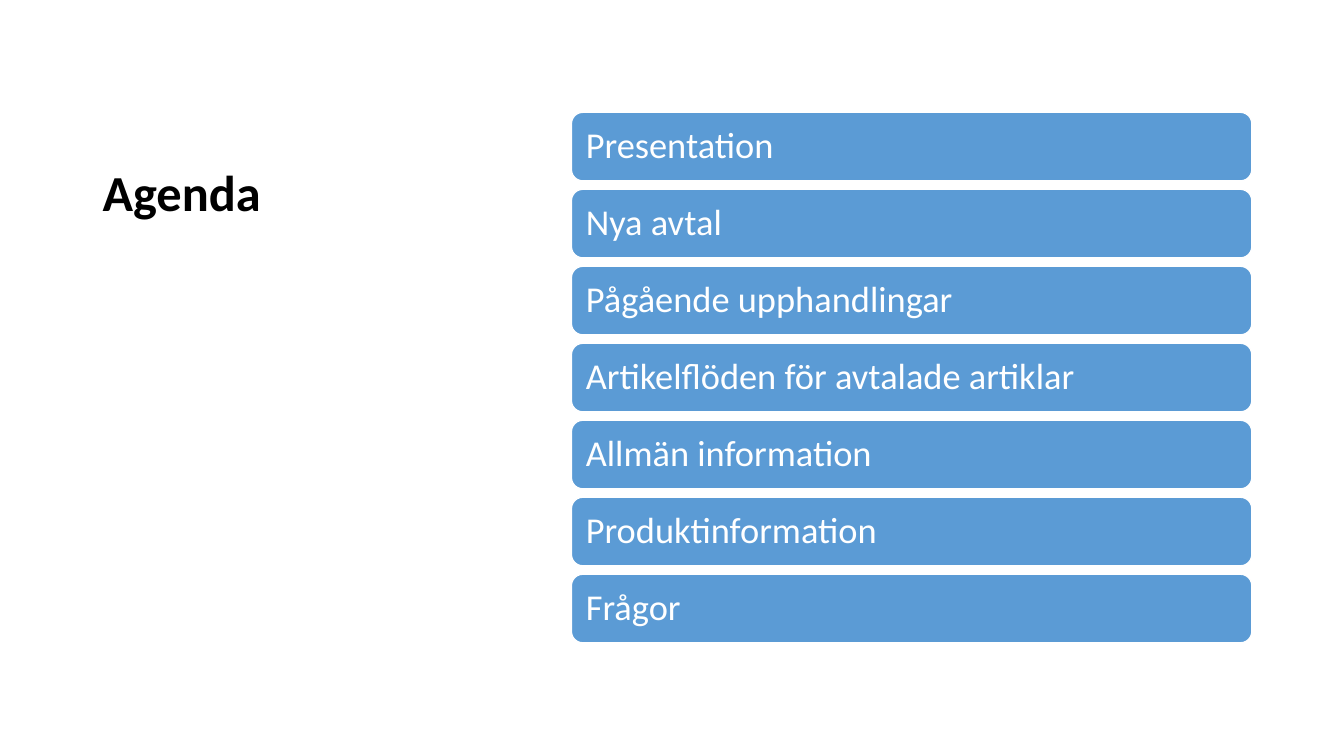
from pptx import Presentation
from pptx import util as u
from pptx.dml.color import RGBColor
from pptx.enum import shapes, text

AGENDA_ITEMS = [
    "Presentation",
    "Nya avtal",
    "Pågående upphandlingar",
    "Artikelflöden för avtalade artiklar",
    "Allmän information",
    "Produktinformation",
    "Frågor",
]


def color(hex_value):
    return RGBColor.from_string(hex_value)


def write(frame, content, *, size, ink, font, bold=False,
          anchor=text.MSO_ANCHOR.MIDDLE, inset=None):
    """Fill a text frame with one left-aligned paragraph."""
    frame.word_wrap = True
    frame.auto_size = text.MSO_AUTO_SIZE.NONE
    frame.vertical_anchor = anchor
    if inset is not None:
        frame.margin_left = frame.margin_right = u.Cm(inset)
        frame.margin_top = frame.margin_bottom = u.Cm(inset)
    paragraph = frame.paragraphs[0]
    paragraph.alignment = text.PP_ALIGN.LEFT
    paragraph.line_spacing = 0.9
    run = paragraph.add_run()
    run.text = content
    run.font.name = font
    run.font.size = u.Pt(size)
    run.font.bold = bold
    run.font.color.rgb = color(ink)


class AgendaSlide:
    font = "Calibri"
    black = "000000"
    white = "FFFFFF"
    blue = "5B9BD5"

    def __init__(self, presentation):
        self.slide = presentation.slides.add_slide(presentation.slide_layouts[5])

    def title(self, content, left, top, width, height):
        shape = self.slide.shapes.title
        shape.left, shape.top = u.Cm(left), u.Cm(top)
        shape.width, shape.height = u.Cm(width), u.Cm(height)
        write(shape.text_frame, content, size=36, ink=self.black, font=self.font,
              bold=True, anchor=text.MSO_ANCHOR.BOTTOM)

    def bar(self, content, left, top, width, height):
        shape = self.slide.shapes.add_shape(
            shapes.MSO_SHAPE.ROUNDED_RECTANGLE,
            u.Cm(left), u.Cm(top), u.Cm(width), u.Cm(height))
        shape.shadow.inherit = False
        shape.fill.solid()
        shape.fill.fore_color.rgb = color(self.blue)
        shape.line.color.rgb = color(self.white)
        shape.line.width = u.Pt(1)
        write(shape.text_frame, content, size=26, ink=self.white, font=self.font,
              inset=0.28)

    def bars(self, items, left, top, width, height, pitch):
        for index, item in enumerate(items):
            self.bar(item, left, top + index * pitch, width, height)


def main():
    presentation = Presentation()
    presentation.slide_width = u.Cm(33.87)
    presentation.slide_height = u.Cm(19.05)
    agenda = AgendaSlide(presentation)
    agenda.title("Agenda", 2.33, 1.27, 10.92, 4.45)
    agenda.bars(AGENDA_ITEMS, left=14.4, top=2.83, width=17.15, height=1.73, pitch=1.94)
    presentation.save("out.pptx")


if __name__ == "__main__":
    main()
